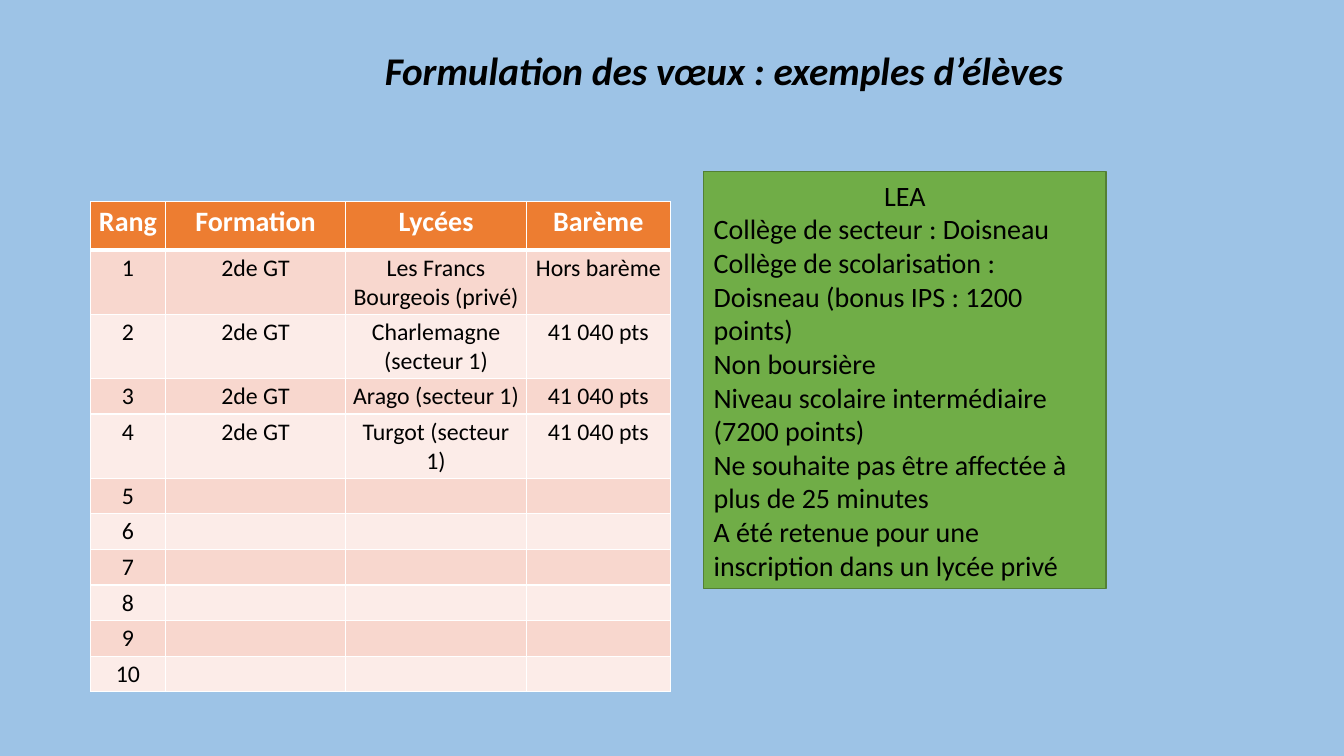
import pptx
import pptx.dml.color
import pptx.enum.shapes
import pptx.enum.text
import pptx.oxml
import pptx.oxml.ns
import pptx.util
import lxml.etree

RGB = pptx.dml.color.RGBColor
SKY = RGB(0x9D, 0xC3, 0xE6)
GREEN = RGB(0x70, 0xAD, 0x47)
DARK_GREEN = RGB(0x53, 0x80, 0x35)
ORANGE = RGB(0xED, 0x7D, 0x31)
BANDS = (RGB(0xF8, 0xD7, 0xCE), RGB(0xFC, 0xEC, 0xE8))
WHITE = RGB(0xFF, 0xFF, 0xFF)
BLACK = RGB(0, 0, 0)

FONT = "Calibri"
SLIDE_WIDTH = pptx.util.Inches(13.33)
SLIDE_HEIGHT = pptx.util.Inches(7.5)
COLUMN = SLIDE_WIDTH / 100
ROW = SLIDE_HEIGHT / 100
CENTER = pptx.enum.text.PP_ALIGN.CENTER
LEFT = pptx.enum.text.PP_ALIGN.LEFT

HEADINGS = ("Rang", "Formation", "Lycées", "Barème")
COLUMN_WEIGHTS = (74, 179, 179, 143)
CHOICES = (
    ("2de GT", "Les Francs Bourgeois (privé)", "Hors barème"),
    ("2de GT", "Charlemagne (secteur 1)", "41 040 pts"),
    ("2de GT", "Arago (secteur 1)", "41 040 pts"),
    ("2de GT", "Turgot (secteur 1)", "41 040 pts"),
)
RANK_COUNT = 10
PROFILE = (
    "LEA",
    "Collège de secteur : Doisneau",
    "Collège de scolarisation : Doisneau (bonus IPS : 1200 points)",
    "Non boursière",
    "Niveau scolaire intermédiaire (7200 points)",
    "Ne souhaite pas être affectée à plus de 25 minutes",
    "A été retenue pour une inscription dans un lycée privé",
)


def grid_box(left, top, width, height):
    """Turn grid columns and rows into slide lengths."""
    return (round(left * COLUMN), round(top * ROW),
            round(width * COLUMN), round(height * ROW))


def style(paragraph, size, color, align, bold=False, italic=False):
    """Format a paragraph and all of its runs."""
    paragraph.alignment = align
    for run in paragraph.runs:
        run.font.name = FONT
        run.font.size = pptx.util.Pt(size)
        run.font.color.rgb = color
        run.font.bold = bold
        run.font.italic = italic


def add_title(slide, box):
    """Place the slide heading in its box."""
    frame = slide.shapes.add_textbox(*box).text_frame
    frame.word_wrap = True
    frame.vertical_anchor = pptx.enum.text.MSO_ANCHOR.MIDDLE
    frame.text = "Formulation des vœux : exemples d’élèves"
    heading = frame.paragraphs[0]
    heading.line_spacing = 0.9
    style(heading, 28, BLACK, CENTER, bold=True, italic=True)


def add_profile(slide, box):
    """Place the green card that describes the pupil."""
    card = slide.shapes.add_shape(pptx.enum.shapes.MSO_SHAPE.RECTANGLE, *box)
    card.shadow.inherit = False
    card.fill.solid()
    card.fill.fore_color.rgb = GREEN
    card.line.color.rgb = DARK_GREEN
    card.line.width = pptx.util.Pt(1)
    frame = card.text_frame
    frame.word_wrap = True
    frame.auto_size = pptx.enum.text.MSO_AUTO_SIZE.SHAPE_TO_FIT_TEXT
    frame.text = "\n".join(PROFILE)
    for index, paragraph in enumerate(frame.paragraphs):
        style(paragraph, 20, BLACK, LEFT if index else CENTER)


def set_borders(cell, top, bottom):
    """Draw white cell borders, with the given top and bottom widths in points."""
    properties = cell._tc.get_or_add_tcPr()
    widths = (("lnL", 1), ("lnR", 1), ("lnT", top), ("lnB", bottom))
    for index, (side, width) in enumerate(widths):
        border = pptx.oxml.parse_xml(
            f'<a:{side} {pptx.oxml.ns.nsdecls("a")} w="{pptx.util.Pt(width)}">'
            f'<a:solidFill><a:srgbClr val="{WHITE}"/></a:solidFill></a:{side}>')
        properties.insert(index, border)


def fill_cell(cell, text, row):
    """Write and format one table cell according to its row."""
    header = row == 0
    size = 20 if header else 17
    cell.margin_left = cell.margin_right = pptx.util.Pt(5)
    cell.margin_top = cell.margin_bottom = pptx.util.Pt(2.5)
    cell.fill.solid()
    cell.fill.fore_color.rgb = ORANGE if header else BANDS[(row - 1) % 2]
    set_borders(cell, 3 if row == 1 else 1, 3 if header else 1)
    cell.text = text
    paragraph = cell.text_frame.paragraphs[0]
    style(paragraph, size, WHITE if header else BLACK, CENTER, bold=header)
    if not text:
        lxml.etree.SubElement(
            paragraph._p, pptx.oxml.ns.qn("a:endParaRPr"), sz=str(size * 100))


def add_choices(slide, box):
    """Place the table of ranked choices."""
    rows = [HEADINGS]
    for rank in range(1, RANK_COUNT + 1):
        choice = CHOICES[rank - 1] if rank <= len(CHOICES) else ("", "", "")
        rows.append((str(rank), *choice))
    table = slide.shapes.add_table(len(rows), len(HEADINGS), *box).table
    for column, weight in zip(table.columns, COLUMN_WEIGHTS):
        column.width = round(box[2] * weight / sum(COLUMN_WEIGHTS))
    for index, values in enumerate(rows):
        table.rows[index].height = round(ROW * (4.13 if index else 6.4))
        for cell, text in zip(table.rows[index].cells, values):
            fill_cell(cell, text, index)


def main():
    """Build and save the slide."""
    presentation = pptx.Presentation()
    presentation.slide_width = SLIDE_WIDTH
    presentation.slide_height = SLIDE_HEIGHT
    slide = presentation.slides.add_slide(presentation.slide_layouts[6])
    slide.background.fill.solid()
    slide.background.fill.fore_color.rgb = SKY
    add_profile(slide, grid_box(52.36, 22.67, 29.93, 55.2))
    add_choices(slide, grid_box(6.75, 26.67, 43.14, 69.33))
    add_title(slide, grid_box(24.38, 5.2, 58.96, 8.93))
    presentation.save("out.pptx")


if __name__ == "__main__":
    main()
